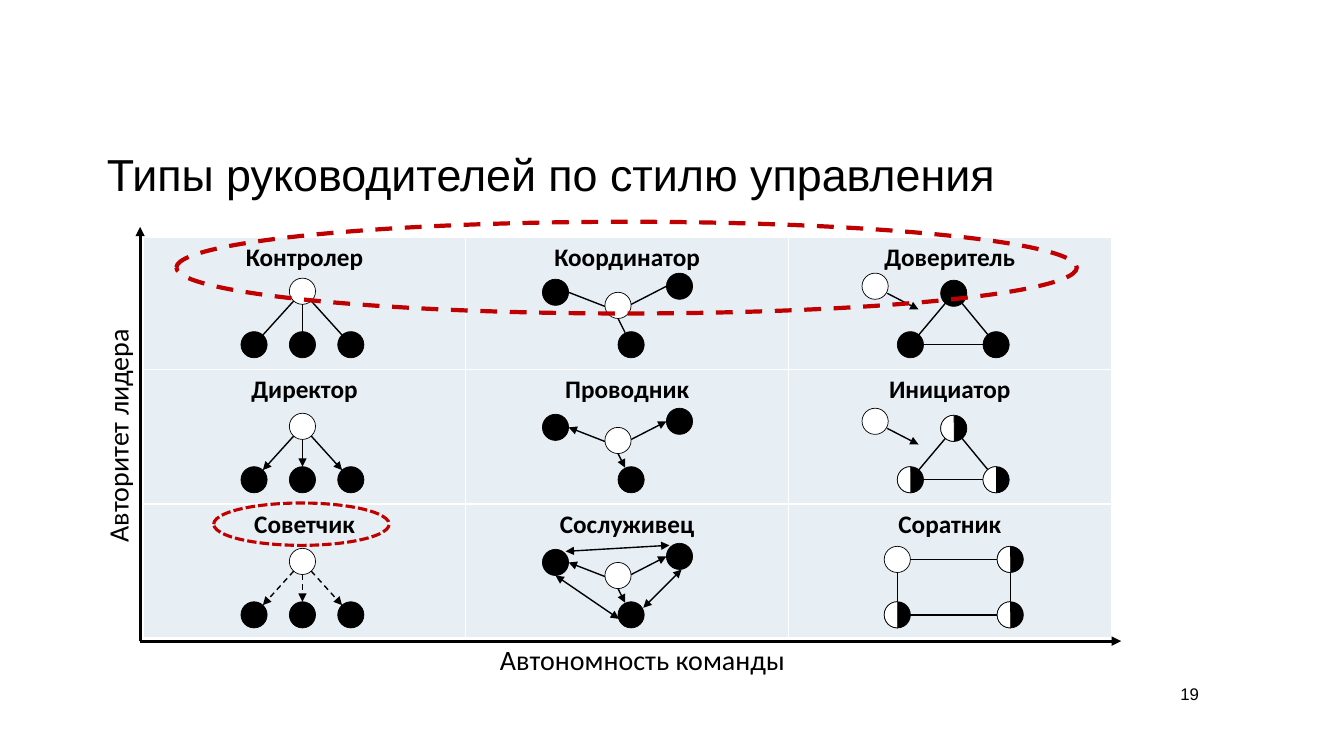
from math import hypot

from lxml import etree
from pptx import Presentation
from pptx.dml.color import RGBColor
from pptx.enum.dml import MSO_LINE
from pptx.enum.shapes import MSO_CONNECTOR, MSO_SHAPE
from pptx.enum.text import MSO_ANCHOR, PP_ALIGN
from pptx.oxml.ns import qn
from pptx.util import Inches, Pt

BLACK = RGBColor(0, 0, 0)
WHITE = RGBColor(255, 255, 255)
RED = RGBColor(0xC0, 0, 0)
PALE = RGBColor(0xE8, 0xEF, 0xF4)
OVAL, CHORD = MSO_SHAPE.OVAL, MSO_SHAPE.CHORD
STRAIGHT = MSO_CONNECTOR.STRAIGHT
DASH, DOTS = MSO_LINE.DASH, MSO_LINE.SQUARE_DOT
LEFT, CENTER, RIGHT = PP_ALIGN.LEFT, PP_ALIGN.CENTER, PP_ALIGN.RIGHT
TOP, MIDDLE, BOTTOM = MSO_ANCHOR.TOP, MSO_ANCHOR.MIDDLE, MSO_ANCHOR.BOTTOM

WIDE, HIGH = 13.33, 7.5
GRID_X, GRID_Y = 1.42, 2.36
COL, ROW = 3.2, 1.34
HEIGHTS = (1.31, 1.33, 1.33)
BALL = 0.26
STYLES = (
    ("Контролер", "Координатор", "Доверитель"),
    ("Директор", "Проводник", "Инициатор"),
    ("Советчик", "Сослуживец", "Соратник"),
)


def box(x, y, w, h):
    return [Inches(v) for v in (x, y, w, h)]


def spot(cell, point):
    """Turn a point inside a grid cell into a point on the slide."""
    row, col = cell
    return GRID_X + col * COL + point[0], GRID_Y + row * ROW + point[1]


def write(frame, text, size=18, font="Calibri", bold=False, align=LEFT,
          anchor=TOP, wrap=True):
    frame.word_wrap = wrap
    frame.vertical_anchor = anchor
    para = frame.paragraphs[0]
    para.alignment = align
    run = para.add_run()
    run.text = text
    run.font.size, run.font.name, run.font.bold = Pt(size), font, bold
    run.font.color.rgb = BLACK


def label(slide, text, place, turn=0, **form):
    area = slide.shapes.add_textbox(*box(*place))
    area.rotation = turn
    write(area.text_frame, text, **form)


def form(slide, kind, place, fill=None, color=BLACK, width=0.5, dash=None):
    shape = slide.shapes.add_shape(kind, *box(*place))
    shape.shadow.inherit = False
    if fill is None:
        shape.fill.background()
    else:
        shape.fill.solid()
        shape.fill.fore_color.rgb = fill
    shape.line.color.rgb, shape.line.width = color, Pt(width)
    if dash:
        shape.line.dash_style = dash
    return shape


def line(slide, start, end, width=1, dash=None, heads=()):
    """Draw a line; heads may hold "headEnd" (start) and "tailEnd" (end)."""
    link = slide.shapes.add_connector(
        STRAIGHT, *[Inches(v) for v in (*start, *end)])
    link.line.color.rgb, link.line.width = BLACK, Pt(width)
    if dash:
        link.line.dash_style = dash
    for head in heads:
        etree.SubElement(link.line._get_or_add_ln(), qn("a:" + head),
                         type="triangle")
    etree.SubElement(link._element.spPr, qn("a:effectLst"))


def ball(slide, cell, point, fill=BLACK, half=False):
    x, y = spot(cell, point)
    place = (x - BALL / 2, y - BALL / 2, BALL, BALL)
    form(slide, OVAL, place, fill)
    if half:
        chord = form(slide, CHORD, place, WHITE)
        chord.adjustments[0], chord.adjustments[1] = 52.78, 162.92


def link(slide, cell, start, end, **look):
    line(slide, spot(cell, start), spot(cell, end), **look)


def join(slide, cell, one, two, **look):
    """Link two balls from rim to rim."""
    dx, dy = two[0] - one[0], two[1] - one[1]
    part = BALL / 2 / hypot(dx, dy)
    link(slide, cell, (one[0] + dx * part, one[1] + dy * part),
         (two[0] - dx * part, two[1] - dy * part), **look)


def star(slide, cell, **look):
    boss = (1.58, 0.53)
    ball(slide, cell, boss, WHITE)
    for x in (1.1, 1.58, 2.06):
        ball(slide, cell, (x, 1.06))
        join(slide, cell, boss, (x, 1.06), **look)


def hub(slide, cell, heads=()):
    ball(slide, cell, (1.51, 0.67), WHITE)
    for point in ((1.64, 1.06), (2.12, 0.48), (0.89, 0.54)):
        ball(slide, cell, point)
    for start, end in (((1.38, 0.68), (1.02, 0.54)),
                       ((1.64, 0.66), (1.99, 0.48)),
                       ((1.51, 0.8), (1.58, 0.94))):
        link(slide, cell, start, end, heads=heads)


def peers(slide, cell):
    for start, end in (((0.99, 0.43), (2.02, 0.37)),
                       ((2.14, 0.61), (1.76, 0.99)),
                       ((0.89, 0.67), (1.52, 1.1))):
        link(slide, cell, start, end, heads=("headEnd", "tailEnd"))


def ring(slide, cell, points):
    for one, two in zip(points, points[1:] + points[:1]):
        join(slide, cell, one, two)


def trio(slide, cell, half=False):
    points = [(1.64, 0.55), (2.06, 1.06), (1.21, 1.06)]
    ball(slide, cell, (0.86, 0.48), WHITE)
    link(slide, cell, (0.98, 0.55), (1.29, 0.71), heads=("tailEnd",))
    ring(slide, cell, points)
    for point in points:
        ball(slide, cell, point, half=half)


def square(slide, cell):
    points = [(1.08, 0.51), (2.2, 0.51), (2.2, 1.06), (1.08, 1.06)]
    ring(slide, cell, points)
    ball(slide, cell, points[0], WHITE)
    for point in points[1:]:
        ball(slide, cell, point, half=True)


def edge(cell):
    """Give a table cell thin white borders."""
    props = cell._tc.get_or_add_tcPr()
    for i, side in enumerate(("lnL", "lnR", "lnT", "lnB")):
        rim = etree.Element(qn("a:" + side), w=str(Pt(1)))
        fill = etree.SubElement(rim, qn("a:solidFill"))
        etree.SubElement(fill, qn("a:srgbClr"), val=str(WHITE))
        props.insert(i, rim)


def matrix(slide):
    table = slide.shapes.add_table(
        3, 3, *box(GRID_X, GRID_Y, 3 * COL, sum(HEIGHTS))).table
    for r, names in enumerate(STYLES):
        table.rows[r].height = Inches(HEIGHTS[r])
        table.columns[r].width = Inches(COL)
        for c, name in enumerate(names):
            cell = table.cell(r, c)
            cell.fill.solid()
            cell.fill.fore_color.rgb = PALE
            edge(cell)
            write(cell.text_frame, name, bold=True, align=CENTER)


def axes(slide):
    zero = (1.39, 6.36)
    for end in ((1.39, 2.25), (11.12, 6.36)):
        line(slide, zero, end, width=2.25, heads=("tailEnd",))
    label(slide, "Автономность команды", (4.86, 6.32, 3.04, 0.44),
          size=20, wrap=False)
    label(slide, "Авторитет лидера", (0, 4.09, 2.34, 0.44), turn=270,
          size=20, wrap=False)


def main():
    deck = Presentation()
    deck.slide_width, deck.slide_height = Inches(WIDE), Inches(HIGH)
    slide = deck.slides.add_slide(deck.slide_layouts[5])
    title = slide.shapes.title
    title.left, title.top, title.width, title.height = box(0.96, 1.36, 9.19, 0.73)
    write(title.text_frame, "Типы руководителей по стилю управления",
          size=32, font="Arial", anchor=MIDDLE)
    matrix(slide)
    label(slide, "19", (10.55, 6.74, 1.44, 0.29), size=12, font="Arial",
          align=RIGHT, anchor=BOTTOM)
    axes(slide)
    arrow = ("tailEnd",)
    star(slide, (0, 0))
    star(slide, (1, 0), heads=arrow)
    star(slide, (2, 0), heads=arrow, dash=DASH)
    hub(slide, (0, 1))
    hub(slide, (1, 1), arrow)
    hub(slide, (2, 1), arrow)
    peers(slide, (2, 1))
    trio(slide, (0, 2))
    trio(slide, (1, 2), half=True)
    square(slide, (2, 2))
    form(slide, OVAL, (1.75, 2.2, 8.93, 0.91), color=RED, width=3, dash=DASH)
    form(slide, OVAL, (2.12, 4.99, 1.74, 0.42), color=RED, width=2.25, dash=DOTS)


    deck.save("out.pptx")


if __name__ == "__main__":
    main()
